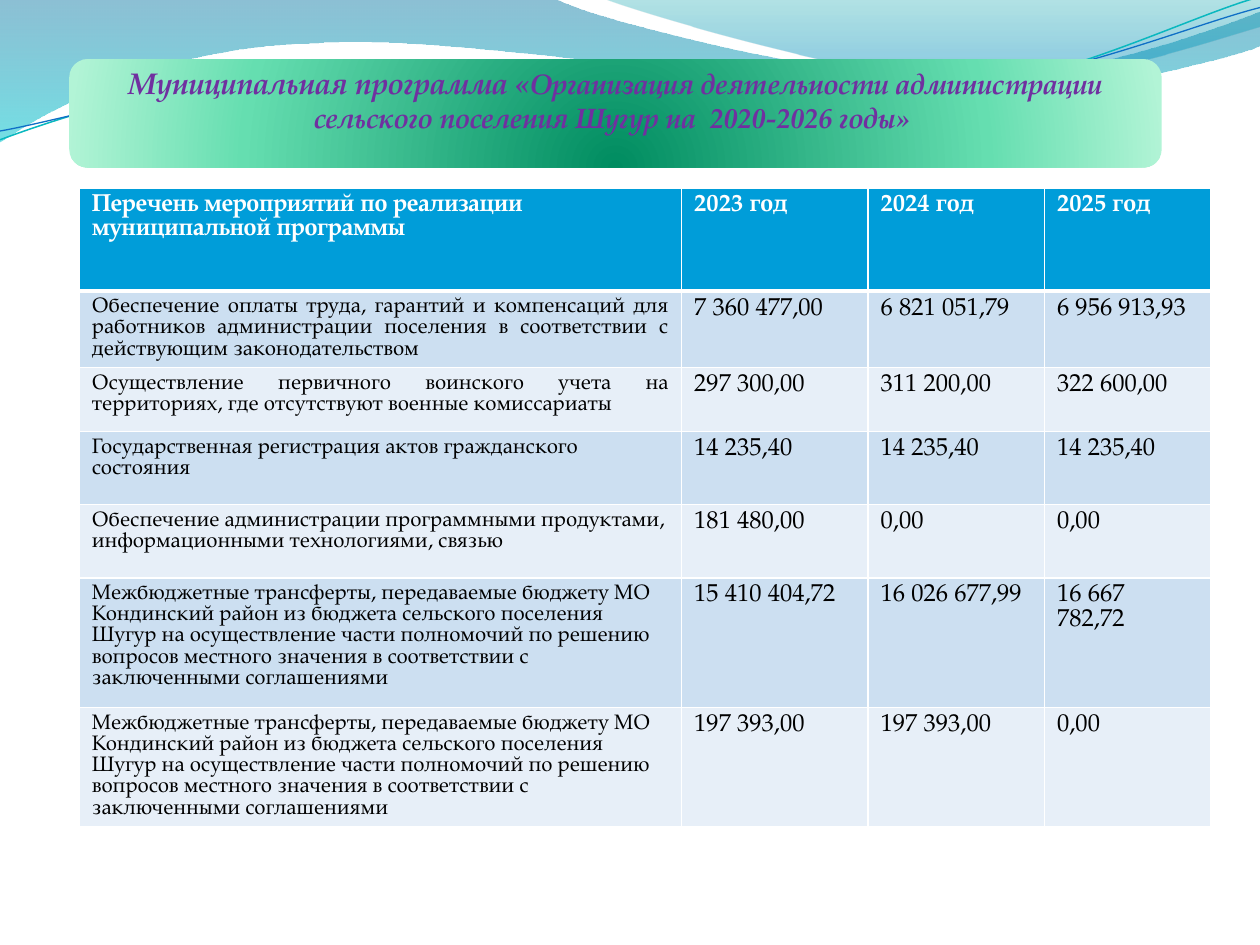
import pptx
import pptx.dml.color
import pptx.enum.shapes
import pptx.enum.text
import pptx.oxml
import pptx.oxml.ns
import pptx.util
from pptx.util import Inches

FONT = "TeX Gyre Pagella"
COLORS = {
    "white": "FFFFFF", "black": "000000", "title": "7030A0",
    "header": "009DD9", "band_dark": "CCDFF1", "band_light": "E7EFF8",
    "wave_blue": "0074A1", "wave_cyan": "00C6CF",
    "wave_teal": "00A1A9", "wave_sky": "008BBF",
    "line_teal": "0AB8BF", "line_blue": "0F6FC6",
    "green_deep": "008C60", "green_mid": "65DEB0", "green_pale": "B2F4D6",
}
NAMESPACE = pptx.oxml.ns.nsdecls("a")
LINEAR = '<a:lin ang="5400000" scaled="0"/>'
CIRCLE = ('<a:path path="circle">'
          '<a:fillToRect l="50000" t="130000" r="50000" b="-30000"/></a:path>')

# Each curve: start point, then segments of one point (line) or three (Bezier)
WAVE_LEFT = [[(0, 0)], [(4.4, -0.01)],
             [(4.76, 0.17), (6.64, 0.63), (7.58, 0.63)],
             [(8.53, 0.63), (9.58, 0.26), (10, 0.09)], [(10.01, 0.36)],
             [(9.83, 0.44), (8.7, 0.76), (7.46, 0.75)],
             [(6.22, 0.75), (3.82, 0.28), (2.57, 0.34)],
             [(1.29, 0.36), (0.46, 0.83), (-0.01, 1.13)]]
WAVE_RIGHT = [[(4.79, -0.01)],
              [(5.09, 0.11), (6.82, 0.62), (7.69, 0.65)],
              [(8.56, 0.69), (9.61, 0.32), (10, 0.21)], [(10, 0)]]
LINE_TEAL = [[(0, 1.11)], [(0.48, 0.93), (1.58, 0.57), (2.77, 0.52)],
             [(3.95, 0.47), (5.93, 0.89), (7.13, 0.8)],
             [(8.33, 0.71), (9.38, 0.15), (9.98, -0.02)]]
LINE_BLUE = [[(0, 1.04)], [(0.47, 0.96), (1.64, 0.61), (2.83, 0.56)],
             [(4.03, 0.51), (5.97, 0.84), (7.17, 0.75)],
             [(8.36, 0.67), (9.41, 0.21), (10, 0.06)]]

TRANSFERS = ("Межбюджетные трансферты, передаваемые бюджету МО Кондинский район "
             "из бюджета сельского поселения Шугур на осуществление части "
             "полномочий по решению вопросов местного значения в соответствии "
             "с заключенными соглашениями")
ROWS = [
    ("Перечень мероприятий по реализации муниципальной программы",
     "2023 год", "2024 год", "2025 год"),
    ("Обеспечение оплаты труда, гарантий и компенсаций для работников "
     "администрации поселения в соответствии с действующим законодательством",
     "7 360 477,00", "6 821 051,79", "6 956 913,93"),
    ("Осуществление первичного воинского учета на территориях, "
     "где отсутствуют военные комиссариаты",
     "297 300,00", "311 200,00", "322 600,00"),
    ("Государственная регистрация актов гражданского состояния",
     "14 235,40", "14 235,40", "14 235,40"),
    ("Обеспечение администрации программными продуктами, "
     "информационными технологиями, связью", "181 480,00", "0,00", "0,00"),
    (TRANSFERS, "15 410 404,72", "16 026 677,99", "16 667 782,72"),
    (TRANSFERS, "197 393,00", "197 393,00", "0,00"),
]
COLUMN_WIDTHS = [4.78, 1.48, 1.4, 1.32]
ROW_HEIGHTS = [0.82, 0.58, 0.51, 0.58, 0.58, 1.03, 0.82]
JUSTIFIED_ROWS = (1, 2)


def rgb(name):
    return pptx.dml.color.RGBColor.from_string(COLORS[name])


def set_gradient(shape, stops, direction):
    """Stops are (position %, colour name, opacity %)."""
    shape.fill.background()
    stop_xml = "".join(
        f'<a:gs pos="{position * 1000}"><a:srgbClr val="{COLORS[name]}">'
        f'<a:alpha val="{opacity * 1000}"/></a:srgbClr></a:gs>'
        for position, name, opacity in stops)
    gradient = pptx.oxml.parse_xml(
        f'<a:gradFill {NAMESPACE} rotWithShape="1"><a:gsLst>{stop_xml}</a:gsLst>'
        f'{direction}</a:gradFill>')
    properties = shape.element.spPr
    properties.replace(properties.find(pptx.oxml.ns.qn("a:noFill")), gradient)


def add_curve(slide, left, top, segments, close):
    points = [(Inches(left + x), Inches(top + y))
              for segment in segments for x, y in segment]
    builder = slide.shapes.build_freeform(*points[0])
    builder.add_line_segments(points[1:], close=close)
    shape = builder.convert_to_shape()
    shape.shadow.inherit = False
    # Join each three line steps of a Bezier segment into one curve step
    steps = iter(list(shape.element.iter(pptx.oxml.ns.qn("a:lnTo"))))
    for segment in segments[1:]:
        first, *others = [next(steps) for _ in segment]
        if others:
            curve = pptx.oxml.parse_xml(f"<a:cubicBezTo {NAMESPACE}/>")
            first.addprevious(curve)
            for step in (first, *others):
                curve.append(step[0])
                step.getparent().remove(step)
    return shape


def add_waves(slide, left, top):
    # Translucent bands
    for segments, stops in (
            (WAVE_LEFT, [(0, "wave_blue", 45), (100, "wave_cyan", 55)]),
            (WAVE_RIGHT, [(0, "wave_teal", 30), (80, "wave_sky", 45)])):
        band = add_curve(slide, left, top, segments, close=True)
        set_gradient(band, stops, LINEAR)
        band.line.fill.background()
    # Thin lines
    for segments, name, width in ((LINE_TEAL, "line_teal", 0.85),
                                  (LINE_BLUE, "line_blue", 0.75)):
        curve = add_curve(slide, left, top, segments, close=False)
        curve.fill.background()
        curve.line.color.rgb = rgb(name)
        curve.line.width = pptx.util.Pt(width)


def add_title(slide, left, top, width, height):
    shape = slide.shapes.add_shape(
        pptx.enum.shapes.MSO_SHAPE.ROUNDED_RECTANGLE,
        Inches(left), Inches(top), Inches(width), Inches(height))
    set_gradient(shape, [(0, "green_deep", 100), (68, "green_mid", 100),
                         (100, "green_pale", 100)], CIRCLE)
    shape.line.fill.background()
    shape.shadow.inherit = False
    frame = shape.text_frame
    frame.word_wrap = True
    frame.vertical_anchor = pptx.enum.text.MSO_ANCHOR.TOP
    frame.margin_top = 0
    paragraph = frame.paragraphs[0]
    paragraph.alignment = pptx.enum.text.PP_ALIGN.CENTER
    font = paragraph.font
    font.name, font.bold, font.italic = FONT, True, True
    font.color.rgb = rgb("title")
    for text, size in (("Муниципальная программа «", 17),
                       ("Организация деятельности администрации сельского "
                        "поселения Шугур на  2020-2026 годы» ", 16)):
        run = paragraph.add_run()
        run.text = text
        run.font.size = pptx.util.Pt(size)


def set_borders(cell, row):
    properties = cell._tc.get_or_add_tcPr()
    widths = {"L": 1, "R": 1, "T": 3 if row == 1 else 1, "B": 3 if row == 0 else 1}
    for side, width in widths.items():
        properties.append(pptx.oxml.parse_xml(
            f'<a:ln{side} {NAMESPACE} w="{width * 12700}"><a:solidFill>'
            f'<a:srgbClr val="{COLORS["white"]}"/></a:solidFill></a:ln{side}>'))


def fill_cell(cell, text, row, column):
    set_borders(cell, row)
    is_header = row == 0
    band = "band_dark" if row % 2 else "band_light"
    cell.fill.solid()
    cell.fill.fore_color.rgb = rgb("header" if is_header else band)
    cell.text = text
    paragraph = cell.text_frame.paragraphs[0]
    if column == 0 and row in JUSTIFIED_ROWS:
        paragraph.alignment = pptx.enum.text.PP_ALIGN.JUSTIFY
    font = paragraph.font
    font.name, font.bold = FONT, is_header
    font.size = pptx.util.Pt(12 if column == 0 and not is_header else 14)
    font.color.rgb = rgb("white" if is_header else "black")


def add_budget_table(slide, left, top):
    table = slide.shapes.add_table(
        len(ROWS), len(COLUMN_WIDTHS), Inches(left), Inches(top),
        Inches(sum(COLUMN_WIDTHS)), Inches(sum(ROW_HEIGHTS))).table
    for column, width in zip(table.columns, COLUMN_WIDTHS):
        column.width = Inches(width)
    for row, height in zip(table.rows, ROW_HEIGHTS):
        row.height = Inches(height)
    for row, texts in enumerate(ROWS):
        for column, text in enumerate(texts):
            fill_cell(table.cell(row, column), text, row, column)


def main():
    presentation = pptx.Presentation()
    presentation.slide_width, presentation.slide_height = Inches(10), Inches(7.5)
    slide = presentation.slides.add_slide(presentation.slide_layouts[6])
    add_waves(slide, 0, 0)
    add_title(slide, 0.55, 0.47, 8.67, 0.86)
    add_budget_table(slide, 0.63, 1.49)
    presentation.save("out.pptx")


if __name__ == "__main__":
    main()
